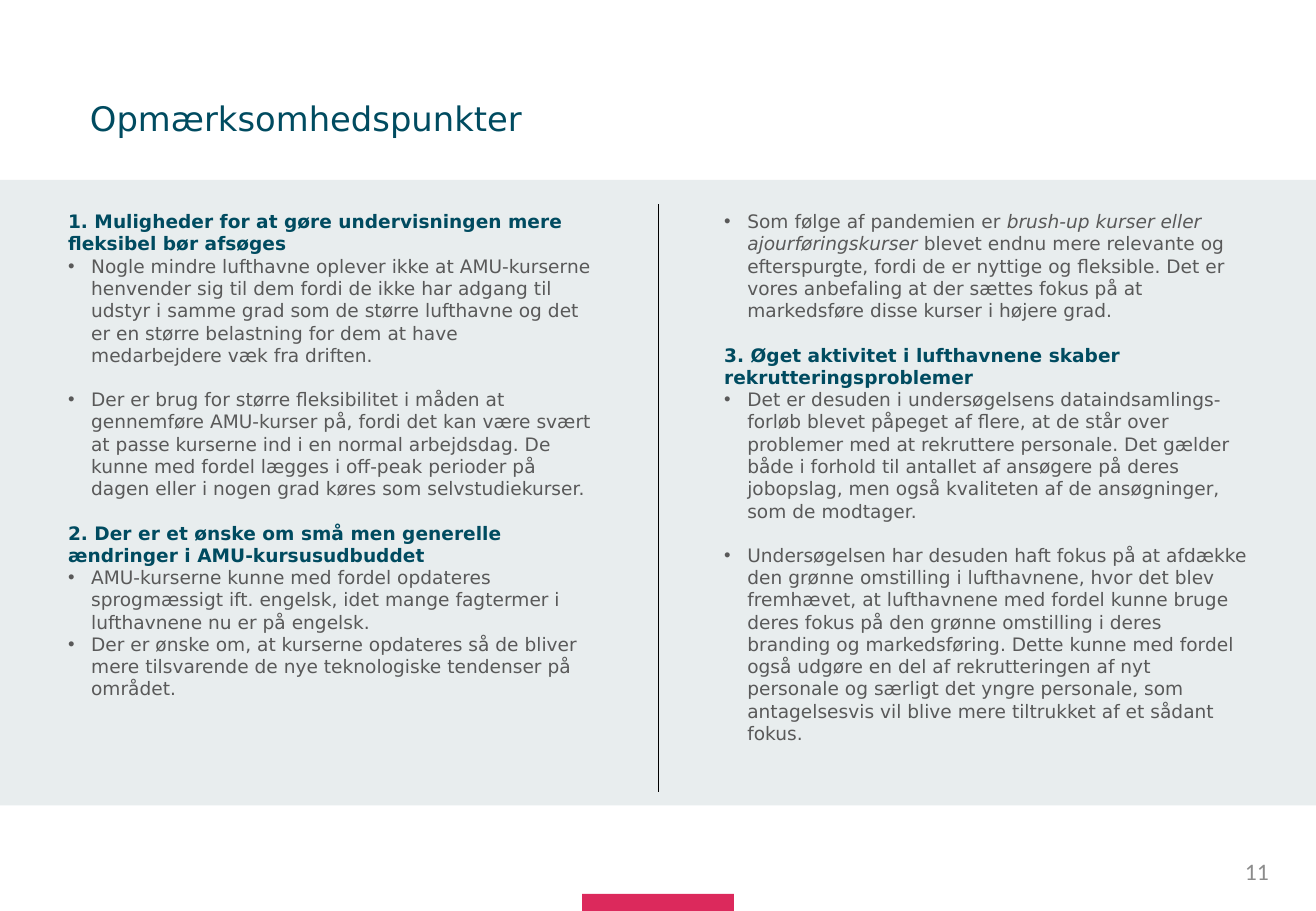
from lxml.etree import SubElement
from pptx import Presentation
from pptx.dml.color import RGBColor
from pptx.enum.shapes import MSO_CONNECTOR as CONNECTOR, MSO_SHAPE as SHAPE
from pptx.enum.text import MSO_ANCHOR as ANCHOR, MSO_AUTO_SIZE as AUTO_SIZE, PP_ALIGN as ALIGN
from pptx.oxml.ns import qn
from pptx.util import Pt

PX = 9144  # EMU per px, 100 px to the inch
COLORS = {
    "heading": "004B60",
    "text": "595959",
    "band": "8DA5AD",
    "accent": "DC295C",
    "divider": "000000",
    "number": "8C8C8C",
}
FORMATS = {
    "title": {"size": Pt(20), "name": "DejaVu Sans", "bold": False},
    "heading": {"size": Pt(11), "name": "DejaVu Sans", "bold": True},
    "text": {"size": Pt(11), "name": "DejaVu Sans", "bold": False},
    "number": {"size": Pt(14), "name": "Calibri"},
}
INDENT = 19
LINE_GAP = 13  # points, one line of body text

# Each paragraph: kind, space before in points, runs (every second run is italic)
FLEXIBILITY_AND_COURSES = [
    ("heading", 0, ["1. Muligheder for at gøre undervisningen mere fleksibel bør afsøges"]),
    ("bullet", 0, ["Nogle mindre lufthavne oplever ikke at AMU-kurserne henvender sig til dem "
                   "fordi de ikke har adgang til udstyr i samme grad som de større lufthavne og "
                   "det er en større belastning for dem at have medarbejdere væk fra driften."]),
    ("bullet", LINE_GAP, ["Der er brug for større fleksibilitet i måden at gennemføre AMU-kurser på, "
                          "fordi det kan være svært at passe kurserne ind i en normal arbejdsdag. De "
                          "kunne med fordel lægges i off-peak perioder på dagen eller i nogen grad "
                          "køres som selvstudiekurser."]),
    ("heading", LINE_GAP, ["2. Der er et ønske om små men generelle ændringer i AMU-kursusudbuddet"]),
    ("bullet", 0, ["AMU-kurserne kunne med fordel opdateres sprogmæssigt ift. engelsk, idet mange "
                   "fagtermer i lufthavnene nu er på engelsk."]),
    ("bullet", 0, ["Der er ønske om, at kurserne opdateres så de bliver mere tilsvarende de nye "
                   "teknologiske tendenser på området."]),
]
RECRUITMENT = [
    ("bullet", 0, ["Som følge af pandemien er ",
                   "brush-up kurser eller ajourføringskurser",
                   " blevet endnu mere relevante og efterspurgte, fordi de er nyttige og fleksible. "
                   "Det er vores anbefaling at der sættes fokus på at markedsføre disse kurser i "
                   "højere grad."]),
    ("heading", LINE_GAP, ["3. Øget aktivitet i lufthavnene skaber rekrutteringsproblemer"]),
    ("bullet", 0, ["Det er desuden i undersøgelsens dataindsamlings-forløb blevet påpeget af flere, "
                   "at de står over problemer med at rekruttere personale. Det gælder både i forhold "
                   "til antallet af ansøgere på deres jobopslag, men også kvaliteten af de "
                   "ansøgninger, som de modtager."]),
    ("bullet", LINE_GAP, ["Undersøgelsen har desuden haft fokus på at afdække den grønne omstilling i "
                          "lufthavnene, hvor det blev fremhævet, at lufthavnene med fordel kunne bruge "
                          "deres fokus på den grønne omstilling i deres branding og markedsføring. "
                          "Dette kunne med fordel også udgøre en del af rekrutteringen af nyt "
                          "personale og særligt det yngre personale, som antagelsesvis vil blive mere "
                          "tiltrukket af et sådant fokus."]),
]


def set_attributes(target, values):
    for key, value in values.items():
        setattr(target, key, value)


def place(part, left, top, width, height):
    set_attributes(part, {"left": left * PX, "top": top * PX,
                          "width": width * PX, "height": height * PX})


def add_run(paragraph, text, style, color, italic=False):
    run = paragraph.add_run()
    run.text = text
    set_attributes(run.font, {**FORMATS[style], "italic": italic})
    run.font.color.rgb = RGBColor.from_string(COLORS[color])


def add_bar(slide, color, left, top, width, height, opacity=100):
    bar = slide.shapes.add_shape(SHAPE.RECTANGLE, *(v * PX for v in (left, top, width, height)))
    bar.shadow.inherit = False
    bar.line.fill.background()
    bar.fill.solid()
    bar.fill.fore_color.rgb = RGBColor.from_string(COLORS[color])
    if opacity < 100:
        rgb = bar.fill._xPr.find(".//" + qn("a:srgbClr"))
        SubElement(rgb, qn("a:alpha"), val=str(opacity * 1000))


def add_divider(slide, x, top, bottom):
    divider = slide.shapes.add_connector(CONNECTOR.STRAIGHT, x * PX, top * PX, x * PX, bottom * PX)
    divider.line.width = Pt(0.5)
    divider.line.color.rgb = RGBColor.from_string(COLORS["divider"])
    SubElement(divider._element.spPr, qn("a:effectLst"))


def fill_title(title, text):
    place(title, 74, 79, 934, 40)
    set_attributes(title.text_frame, {
        "margin_left": 0, "margin_right": 0, "margin_top": 0, "margin_bottom": 0,
        "vertical_anchor": ANCHOR.MIDDLE, "auto_size": AUTO_SIZE.NONE, "word_wrap": True})
    paragraph = title.text_frame.paragraphs[0]
    set_attributes(paragraph, {"alignment": ALIGN.LEFT, "line_spacing": 0.9})
    add_run(paragraph, text, "title", "heading")


def set_bullet(paragraph, bulleted):
    properties = paragraph._p.get_or_add_pPr()
    indent = INDENT * PX if bulleted else 0
    properties.set("marL", str(indent))
    properties.set("indent", str(-indent))
    if bulleted:
        SubElement(properties, qn("a:buChar"), char="•")
    else:
        SubElement(properties, qn("a:buNone"))


def fill_column(column, left, points):
    place(column, left, 168, 451, 500)
    frame = column.text_frame
    set_attributes(frame, {"auto_size": AUTO_SIZE.NONE, "word_wrap": True,
                           "vertical_anchor": ANCHOR.TOP})
    for number, (kind, gap, runs) in enumerate(points):
        paragraph = frame.add_paragraph() if number else frame.paragraphs[0]
        set_bullet(paragraph, kind == "bullet")
        set_attributes(paragraph, {"space_before": Pt(gap), "space_after": Pt(0),
                                   "alignment": ALIGN.LEFT})
        style = "text" if kind == "bullet" else "heading"
        for position, text in enumerate(runs):
            add_run(paragraph, text, style, style, italic=position % 2 == 1)


def add_page_number(slide, number):
    box = slide.shapes.add_textbox(*(v * PX for v in (810, 697, 244, 40)))
    set_attributes(box.text_frame, {"word_wrap": True, "vertical_anchor": ANCHOR.MIDDLE})
    paragraph = box.text_frame.paragraphs[0]
    paragraph.alignment = ALIGN.RIGHT
    add_run(paragraph, number, "number", "number")


def main():
    deck = Presentation()
    set_attributes(deck, {"slide_width": 1083 * PX, "slide_height": 750 * PX})
    slide = deck.slides.add_slide(deck.slide_layouts.get_by_name("Two Content"))
    title, left_column, right_column = slide.placeholders

    # Background band and footer accent
    add_bar(slide, "accent", 479, 736, 125, 14)
    add_bar(slide, "band", 0, 148, 1083, 515, opacity=20)
    add_page_number(slide, "11")
    add_divider(slide, 542, 168, 652)

    # Title and columns, brought in front of the band
    for placeholder in (title, left_column, right_column):
        slide.shapes._spTree.append(placeholder._element)
    fill_title(title, "Opmærksomhedspunkter")
    fill_column(left_column, 46, FLEXIBILITY_AND_COURSES)
    fill_column(right_column, 586, RECRUITMENT)

    deck.save("out.pptx")


if __name__ == "__main__":
    main()
